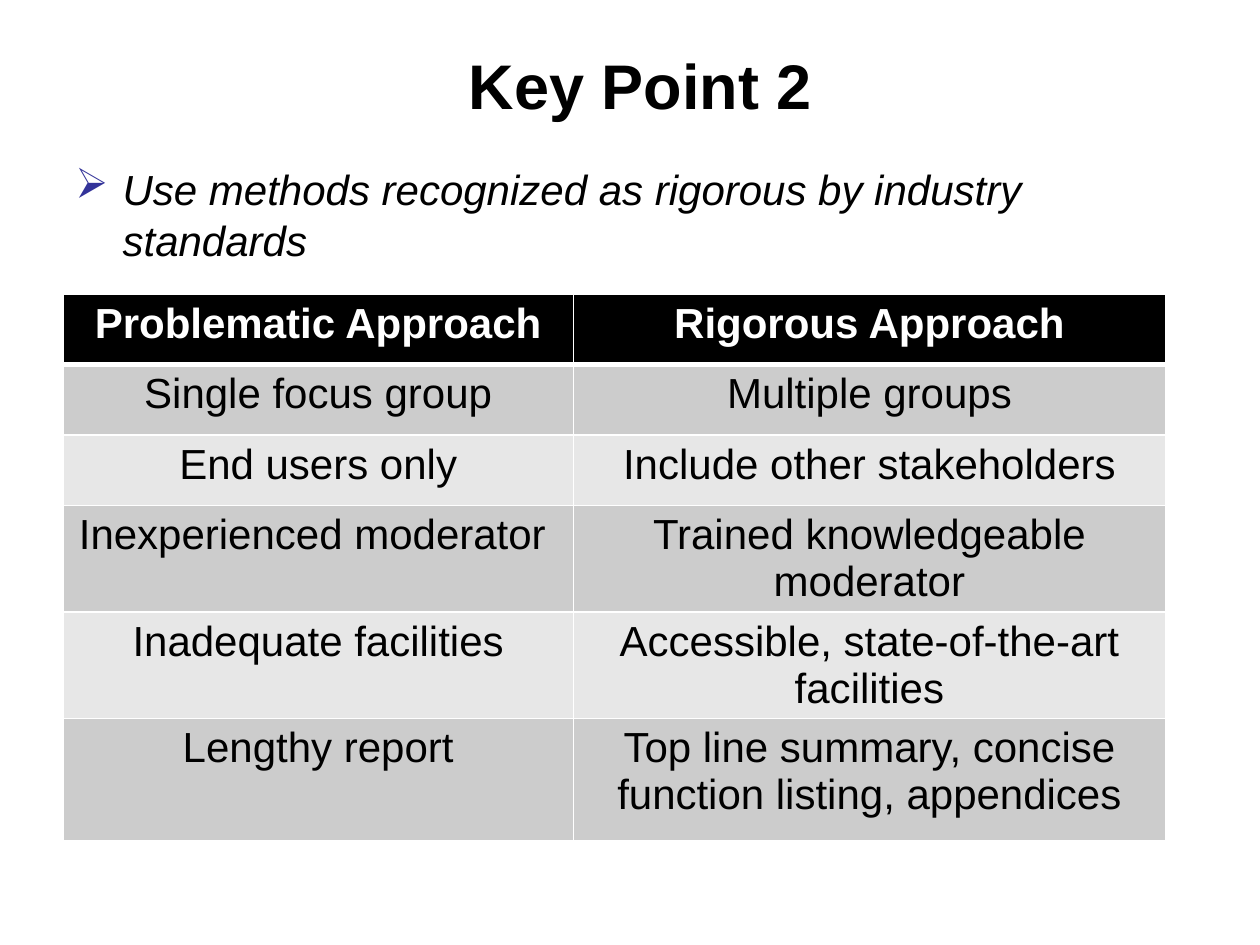
import pptx
import pptx.dml.color
import pptx.enum.text
import pptx.oxml
import pptx.oxml.ns
import pptx.util
from pptx.util import Pt

ALIGN = pptx.enum.text.PP_ALIGN
ANCHOR = pptx.enum.text.MSO_ANCHOR
NS = pptx.oxml.ns.nsdecls("a")


def color(value):
    return pptx.dml.color.RGBColor.from_string(value)


class Deck:
    font = "Arial"
    ink = "000000"
    paper = "FFFFFF"
    accent = "333399"
    bands = ("CCCCCC", "E7E7E7")

    def __init__(self, width, height):
        self.prs = pptx.Presentation()
        self.prs.slide_width, self.prs.slide_height = Pt(width), Pt(height)
        self.s = self.prs.slides.add_slide(self.prs.slide_layouts[6])

    def run(self, p, text, size, fill=None, bold=False, italic=False):
        r = p.add_run()
        r.text = text
        r.font.name, r.font.size = self.font, Pt(size)
        r.font.bold, r.font.italic = bold, italic
        r.font.color.rgb = color(fill or self.ink)

    def text(self, box, text, size, align=ALIGN.LEFT, anchor=ANCHOR.TOP, bullet=None, **style):
        sp = self.s.shapes.add_textbox(*map(Pt, box))
        tf = sp.text_frame
        tf.word_wrap = True
        tf.vertical_anchor = anchor
        p = tf.paragraphs[0]
        p.alignment = align
        if bullet:
            self.bullet(p, bullet)
        self.run(p, text, size, **style)

    def bullet(self, p, char, indent=27):
        pPr = p._p.get_or_add_pPr()
        pPr.set("marL", str(Pt(indent)))
        pPr.set("indent", str(-Pt(indent)))
        for xml in (f'<a:buClr {NS}><a:srgbClr val="{self.accent}"/></a:buClr>',
                    f'<a:buChar {NS} char="{char}"/>'):
            pPr.append(pptx.oxml.parse_xml(xml))

    def borders(self, cell, bottom):
        tcPr = cell._tc.get_or_add_tcPr()
        for side, width in (("L", 1), ("R", 1), ("T", 1), ("B", bottom)):
            tcPr.append(pptx.oxml.parse_xml(
                f'<a:ln{side} {NS} w="{Pt(width)}"><a:solidFill>'
                f'<a:srgbClr val="{self.paper}"/></a:solidFill></a:ln{side}>'))

    def table(self, left, top, widths, heights, rows, size):
        table = self.s.shapes.add_table(
            len(rows), len(widths), Pt(left), Pt(top),
            Pt(sum(widths)), Pt(sum(heights))).table
        for column, width in zip(table.columns, widths):
            column.width = Pt(width)
        for i, (row, height) in enumerate(zip(rows, heights)):
            table.rows[i].height = Pt(height)
            header = i == 0
            for j, text in enumerate(row):
                cell = table.cell(i, j)
                self.borders(cell, bottom=3 if header else 1)
                cell.fill.solid()
                cell.fill.fore_color.rgb = color(self.ink if header else self.bands[(i - 1) % 2])
                p = cell.text_frame.paragraphs[0]
                p.alignment = ALIGN.CENTER
                self.run(p, text, size, self.paper if header else self.ink, bold=header)


def main():
    deck = Deck(720, 540)
    deck.table(36, 168, (291.6, 338.4), (40.32, 40.32, 40.32, 53.5, 54, 69.8), (
        ("Problematic Approach", "Rigorous Approach"),
        ("Single focus group", "Multiple groups"),
        ("End users only", "Include other stakeholders"),
        ("Inexperienced moderator ", "Trained knowledgeable moderator"),
        ("Inadequate facilities", "Accessible, state-of-the-art facilities"),
        ("Lengthy report", "Top line summary, concise function listing, appendices"),
    ), size=24)
    deck.text((36, 90, 648, 398), "Use methods recognized as rigorous by industry standards",
              24, bullet="➢", italic=True)
    deck.text((42, 6, 648, 84), "Key Point 2", 36, ALIGN.CENTER, ANCHOR.MIDDLE, bold=True)
    deck.prs.save("out.pptx")


if __name__ == "__main__":
    main()
